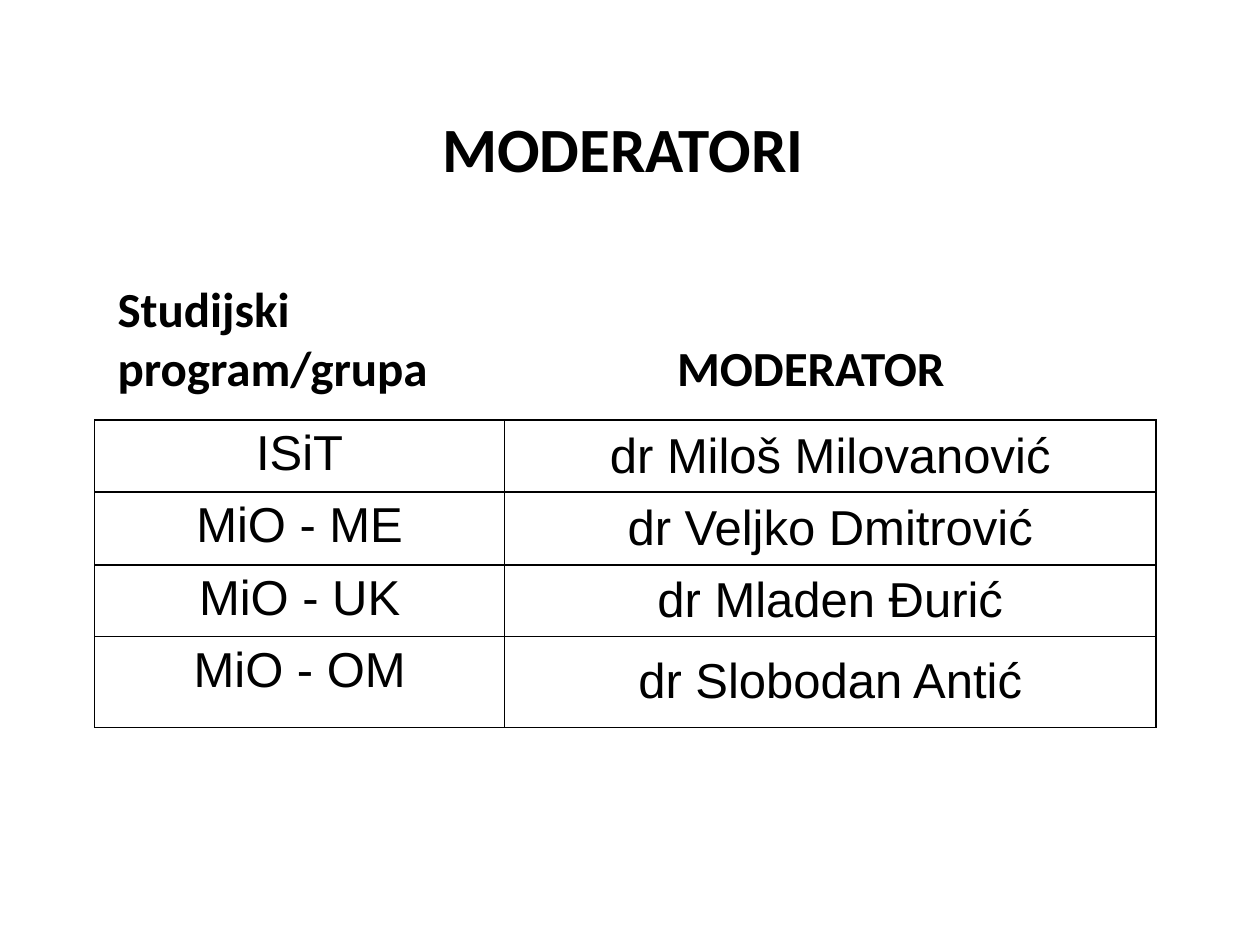
from dataclasses import dataclass

from lxml import etree
from pptx import Presentation
from pptx.dml.color import RGBColor
from pptx.enum import text
from pptx.oxml import ns
from pptx.util import Cm, Pt


@dataclass(frozen=True)
class Theme:
    ink: RGBColor = RGBColor(0, 0, 0)
    paper: RGBColor = RGBColor(255, 255, 255)
    heading_font: str = "Calibri"
    body_font: str = "Arial"
    title_size: int = 36
    body_size: int = 28
    border: int = 1


THEME = Theme()
MODERATORS = [
    ("ISiT", "dr Miloš Milovanović"),
    ("MiO - ME", "dr Veljko Dmitrović"),
    ("MiO - UK", "dr Mladen Đurić"),
    ("MiO - OM", "dr Slobodan Antić"),
]
COLUMN_WIDTHS = (8.26, 13.13)
ROW_HEIGHTS = (1.45, 1.47, 1.4, 1.83)


def add_run(paragraph, content, size, font, bold=False):
    run = paragraph.add_run()
    run.text = content
    run.font.size = Pt(size)
    run.font.name = font
    run.font.bold = bold
    run.font.color.rgb = THEME.ink


def add_tab_stop(paragraph, position):
    properties = paragraph._p.get_or_add_pPr()
    stops = etree.SubElement(properties, ns.qn("a:tabLst"))
    etree.SubElement(stops, ns.qn("a:tab"), pos=str(int(position)), algn="l")


def add_cell_borders(cell):
    properties = cell._tc.get_or_add_tcPr()
    for index, side in enumerate(("lnL", "lnR", "lnT", "lnB")):
        line = etree.Element(ns.qn(f"a:{side}"), w=str(Pt(THEME.border)))
        fill = etree.SubElement(line, ns.qn("a:solidFill"))
        etree.SubElement(fill, ns.qn("a:srgbClr"), val=str(THEME.ink))
        properties.insert(index, line)


def add_title(slide, left, top, width, height):
    frame = slide.shapes.add_textbox(left, top, width, height).text_frame
    frame.word_wrap = True
    frame.vertical_anchor = text.MSO_ANCHOR.MIDDLE
    paragraph = frame.paragraphs[0]
    paragraph.alignment = text.PP_ALIGN.CENTER
    add_run(paragraph, "MODERATORI ", THEME.title_size, THEME.heading_font, True)


def add_column_headings(slide, left, top, width, height):
    """Place both headings in one box, the second one at a tab stop."""
    frame = slide.shapes.add_textbox(left, top, width, height).text_frame
    frame.word_wrap = False
    frame.auto_size = text.MSO_AUTO_SIZE.SHAPE_TO_FIT_TEXT
    first, second = frame.paragraphs[0], frame.add_paragraph()
    add_tab_stop(second, Cm(11.28))
    for paragraph, content in ((first, "Studijski"),
                               (second, "program/grupa\tMODERATOR")):
        add_run(paragraph, content, THEME.body_size, THEME.heading_font, True)


def add_moderator_table(slide, left, top, width, height):
    table = slide.shapes.add_table(
        len(MODERATORS), len(COLUMN_WIDTHS), left, top, width, height).table
    table.first_row = table.horz_banding = False
    for column, column_width in zip(table.columns, COLUMN_WIDTHS):
        column.width = Cm(column_width)
    anchors = (text.MSO_ANCHOR.TOP, text.MSO_ANCHOR.MIDDLE)
    for row, row_height, entries in zip(table.rows, ROW_HEIGHTS, MODERATORS):
        row.height = Cm(row_height)
        for cell, content, anchor in zip(row.cells, entries, anchors):
            cell.fill.solid()
            cell.fill.fore_color.rgb = THEME.paper
            cell.vertical_anchor = anchor
            add_cell_borders(cell)
            paragraph = cell.text_frame.paragraphs[0]
            paragraph.alignment = text.PP_ALIGN.CENTER
            add_run(paragraph, content, THEME.body_size, THEME.body_font)


def main():
    presentation = Presentation()
    presentation.slide_width, presentation.slide_height = Cm(25.4), Cm(19.05)
    slide = presentation.slides.add_slide(presentation.slide_layouts[6])
    add_title(slide, Cm(0), Cm(0.85), presentation.slide_width, Cm(4.23))
    add_moderator_table(slide, Cm(1.91), Cm(8.47),
                        Cm(sum(COLUMN_WIDTHS)), Cm(sum(ROW_HEIGHTS)))
    add_column_headings(slide, Cm(2.12), Cm(5.5), Cm(17.36), Cm(2.65))
    presentation.save("out.pptx")


if __name__ == "__main__":
    main()
